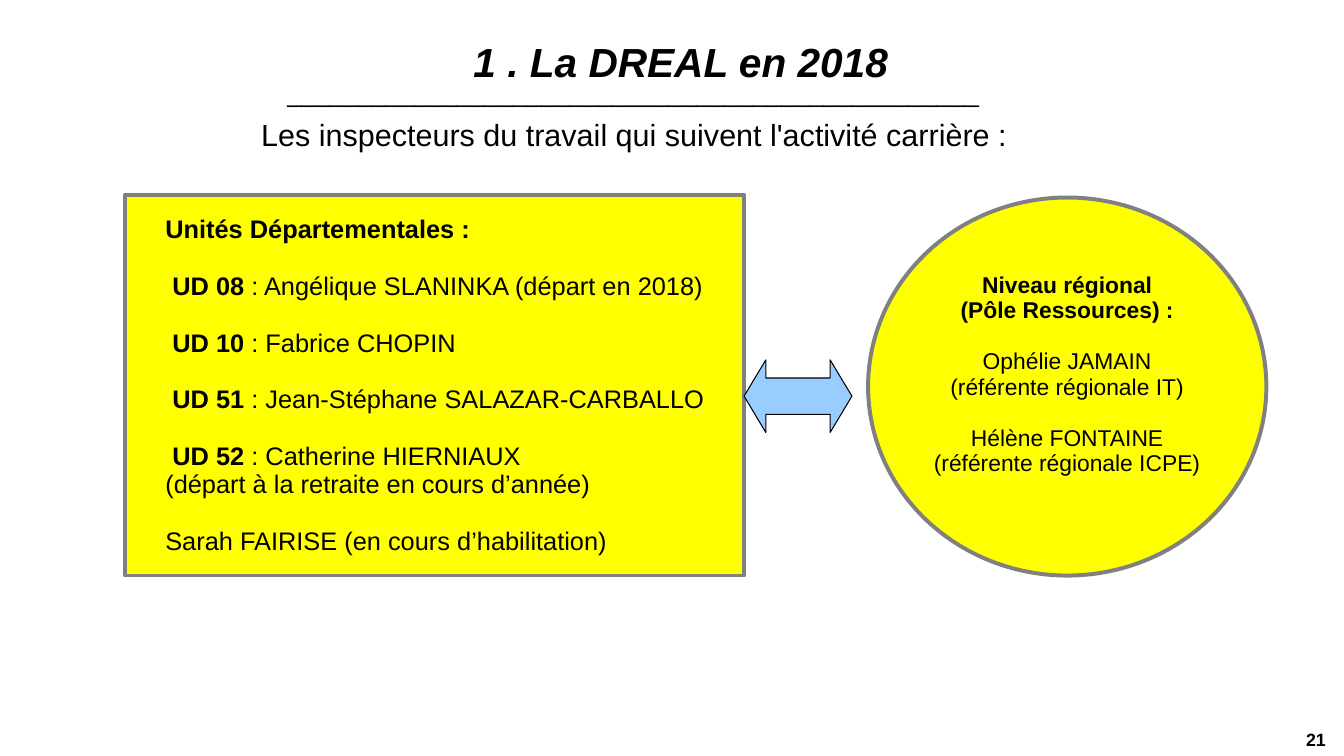
from dataclasses import dataclass

from pptx import Presentation
from pptx.dml.color import RGBColor
from pptx.enum.shapes import MSO_SHAPE
from pptx.enum.text import MSO_ANCHOR, PP_ALIGN
from pptx.util import Inches, Pt

LEFT, CENTER, RIGHT = PP_ALIGN.LEFT, PP_ALIGN.CENTER, PP_ALIGN.RIGHT
TOP, MIDDLE = MSO_ANCHOR.TOP, MSO_ANCHOR.MIDDLE
RECT, OVAL = MSO_SHAPE.RECTANGLE, MSO_SHAPE.OVAL
ARROW = MSO_SHAPE.LEFT_RIGHT_ARROW


@dataclass(frozen=True)
class Theme:
    font: str = "Arial"
    ink: str = "000000"
    panel: str = "FFFF00"
    edge: str = "808080"
    arrow: str = "99CCFF"
    title: float = 29
    lead: float = 21.8
    units: float = 18.1
    region: float = 16.3
    number: float = 12.7


THEME = Theme()

# Each group is a list of lines; each line is (bold part, plain part).
UNITS = [
    [("Unités Départementales :", "")],
    [("UD 08", " : Angélique SLANINKA (départ en 2018)")],
    [("UD 10", " : Fabrice CHOPIN")],
    [("UD 51", " : Jean-Stéphane SALAZAR-CARBALLO")],
    [("UD 52", " : Catherine HIERNIAUX"),
     ("", "(départ à la retraite en cours d’année)")],
    [("", "Sarah FAIRISE (en cours d’habilitation)")],
]
REGION = [
    [("Niveau régional", ""), ("(Pôle Ressources) :", "")],
    [("", "Ophélie JAMAIN"), ("", "(référente régionale IT)")],
    [("", "Hélène FONTAINE"), ("", "(référente régionale ICPE)")],
]


def write(shape, groups, size, align=LEFT, anchor=TOP, italic=False,
          gap=0, inset=0, foot=0, shift=0, wrap=True):
    """Fill a shape; gap parts the groups, shift indents lines of two parts."""
    frame = shape.text_frame
    frame.word_wrap = wrap
    frame.vertical_anchor = anchor
    frame.margin_left, frame.margin_right = Inches(inset), 0
    frame.margin_top, frame.margin_bottom = Inches(0.02), Inches(foot)
    para = None
    for group in groups:
        for row, parts in enumerate(group):
            first = para is None
            para = frame.paragraphs[0] if first else frame.add_paragraph()
            if shift and all(parts):
                props = para._p.get_or_add_pPr()
                props.set("marL", str(Inches(shift)))
                props.set("indent", "0")
            para.alignment = align
            para.line_spacing = 0.93
            para.space_before = Pt(0 if first or row else gap)
            for part, bold in zip(parts, (True, False)):
                if part:
                    run = para.add_run()
                    run.text = part
                    font = run.font
                    font.name, font.size = THEME.font, Pt(size)
                    font.bold, font.italic = bold, italic
                    font.color.rgb = RGBColor.from_string(THEME.ink)


def label(slide, box, bold="", plain="", **style):
    shape = slide.shapes.add_textbox(*map(Inches, box))
    write(shape, [[(bold, plain)]], **style)


def block(slide, kind, box, fill, line, width):
    shape = slide.shapes.add_shape(kind, *map(Inches, box))
    shape.shadow.inherit = False
    shape.fill.solid()
    shape.fill.fore_color.rgb = RGBColor.from_string(fill)
    shape.line.color.rgb = RGBColor.from_string(line)
    shape.line.width = Pt(width)
    return shape


def head(slide, box):
    """Title, rule of underscores and lead sentence."""
    left, top, width, height = box
    title = slide.shapes.title
    title.left, title.top, title.width, title.height = map(Inches, box)
    write(title, [[("1 . La DREAL en 2018", "")]], THEME.title,
          align=CENTER, anchor=MIDDLE, italic=True)
    label(slide, (left + 0.37, top + 0.77, 7.61, 0.39), plain="_" * 49,
          size=THEME.units, wrap=False)
    label(slide, (left + 0.11, top + 1.16, 7.88, 0.34),
          plain="Les inspecteurs du travail qui suivent l'activité carrière :",
          size=THEME.lead)


def panels(slide, box):
    """Departments on the left, region on the right, an arrow between."""
    left, top, width, height = box
    wide, disc = 6.14, 3.95
    units = block(slide, RECT, (left, top, wide, height),
                  THEME.panel, THEME.edge, 2.83)
    write(units, UNITS, THEME.units, anchor=MIDDLE, gap=20.3,
          inset=0.4, shift=0.07)
    region = block(slide, OVAL,
                   (left + width - disc, top + 0.03, disc, height - 0.03),
                   THEME.panel, THEME.edge, 2.83)
    write(region, REGION, THEME.region, align=CENTER, anchor=MIDDLE,
          gap=18.3, foot=0.25)
    arrow = block(slide, ARROW, (left + wide, top + 1.64, 1.07, 0.72),
                  THEME.arrow, THEME.ink, 0.75)
    arrow.adjustments[1] = 0.3


def main():
    deck = Presentation()
    deck.slide_width, deck.slide_height = Inches(13.33), Inches(7.5)
    slide = deck.slides.add_slide(deck.slide_layouts[5])
    head(slide, (2.48, 0, 8.55, 1.25))
    panels(slide, (1.24, 1.93, 11.32, 3.78))
    label(slide, (11.92, 7.23, 1.23, 0.25), bold="21",
          size=THEME.number, align=RIGHT)
    deck.save("out.pptx")


if __name__ == "__main__":
    main()
